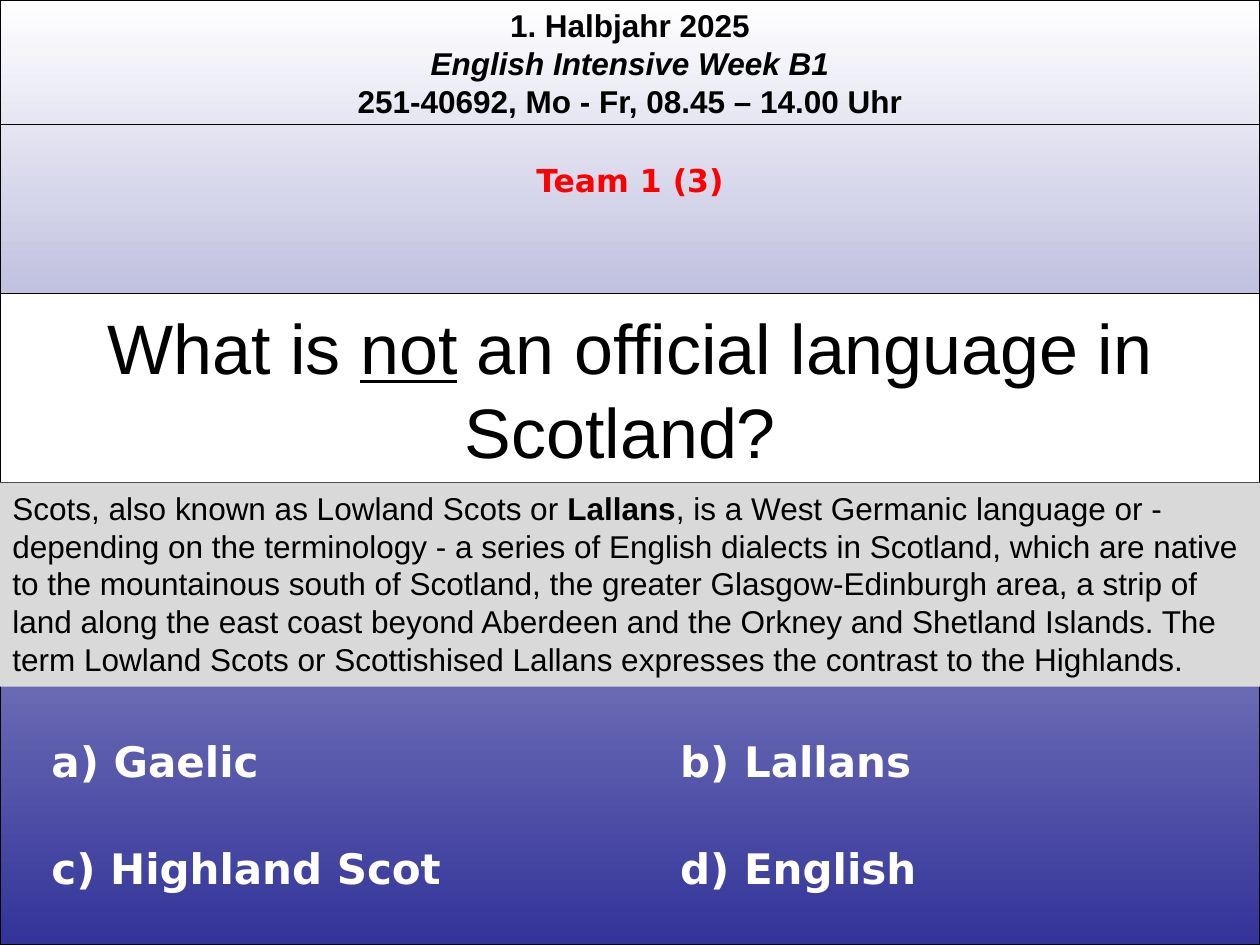
from pptx import Presentation, util as u
from pptx.dml import color
from pptx.enum import shapes, text
from pptx.oxml import ns, xmlchemy

COURSE = [
    [("1. Halbjahr 2025", "b")],
    [("English Intensive Week B1", "bi")],
    [("251-40692, Mo - Fr, 08.45 – 14.00 Uhr", "b")],
]
TEAM = [[("Team 1 (3)", "b")]]
QUESTION = [[("What is ", ""), ("not", "u"), (" an official language in Scotland? ", "")]]
EXPLANATION = [[
    ("Scots, also known as Lowland Scots or ", ""),
    ("Lallans", "b"),
    (", is a West Germanic language or - depending on the terminology - a series of "
     "English dialects in Scotland, which are native to the mountainous south of Scotland, "
     "the greater Glasgow-Edinburgh area, a strip of land along the east coast beyond "
     "Aberdeen and the Orkney and Shetland Islands. The term Lowland Scots or Scottishised "
     "Lallans expresses the contrast to the Highlands.", ""),
]]
ANSWERS = [["a) Gaelic", "b) Lallans"], ["c) Highland Scot", "d) English"]]
ANSWER_LEFTS = [0.31, 5.3]
ANSWER_TOPS = [5.79, 6.64]

THEME = {
    "black": "000000", "white": "FFFFFF", "red": "FF0000", "grey": "D9D9D9", "blue": "333399",
    "sans": "Arial", "display": "DejaVu Sans",
    "small": 18, "answer": 24, "question": 40, "line": 0.75,
}
WIDTH, HEIGHT = 10, 7.5


def rgb(name):
    return color.RGBColor.from_string(THEME[name])


def outline(line):
    line.color.rgb = rgb("black")
    line.width = u.Pt(THEME["line"])


def write(shape, paragraphs, size, ink="black", font="sans", centred=False, middle=False):
    frame = shape.text_frame
    frame.word_wrap = True
    frame.auto_size = text.MSO_AUTO_SIZE.NONE
    frame.vertical_anchor = text.MSO_ANCHOR.MIDDLE if middle else text.MSO_ANCHOR.TOP
    for index, runs in enumerate(paragraphs):
        paragraph = frame.add_paragraph() if index else frame.paragraphs[0]
        paragraph.alignment = text.PP_ALIGN.CENTER if centred else text.PP_ALIGN.LEFT
        for words, style in runs:
            run = paragraph.add_run()
            run.text = words
            run.font.name = THEME[font]
            run.font.size = u.Pt(THEME[size])
            run.font.color.rgb = rgb(ink)
            run.font.bold = "b" in style
            run.font.italic = "i" in style
            run.font.underline = "u" in style


def add_band(slide, top, height):
    band = slide.shapes.add_shape(
        shapes.MSO_SHAPE.RECTANGLE, 0, u.Inches(top), u.Inches(WIDTH), u.Inches(height))
    band.shadow.inherit = False
    return band


def add_text(slide, left, top, width, height, paragraphs, size, **style):
    box = slide.shapes.add_textbox(*map(u.Inches, (left, top, width, height)))
    write(box, paragraphs, size, **style)


def add_backdrop(slide):
    backdrop = add_band(slide, 0, HEIGHT)
    backdrop.fill.gradient()
    backdrop.fill.gradient_angle = 270
    for stop, position, name in zip(backdrop.fill.gradient_stops, (0, 1), ("white", "blue")):
        stop.position = position
        stop.color.rgb = rgb(name)
    outline(backdrop.line)


def add_header(slide):
    add_text(slide, 0, 0, WIDTH, 1.01, COURSE, "small", centred=True)
    rule = slide.shapes.add_connector(
        shapes.MSO_CONNECTOR.STRAIGHT, 0, u.Inches(0.99), u.Inches(WIDTH), u.Inches(0.99))
    outline(rule.line)
    rule.element.spPr.append(xmlchemy.OxmlElement("a:effectLst"))


def place_question(slide):
    title = slide.shapes.title
    slide.shapes.element.append(title.element)
    title.left, title.top = 0, u.Inches(2.33)
    title.width, title.height = u.Inches(WIDTH), u.Inches(1.5)
    title.fill.solid()
    title.fill.fore_color.rgb = rgb("white")
    outline(title.line)
    write(title, QUESTION, "question", centred=True, middle=True)


def add_explanation(slide):
    panel = add_band(slide, 3.83, 1.62)
    panel.fill.solid()
    panel.fill.fore_color.rgb = rgb("grey")
    panel.line.fill.background()
    write(panel, EXPLANATION, "small")


def main():
    presentation = Presentation()
    presentation.slide_width = u.Inches(WIDTH)
    presentation.slide_height = u.Inches(HEIGHT)
    slide = presentation.slides.add_slide(presentation.slide_layouts[5])
    add_backdrop(slide)
    add_header(slide)
    place_question(slide)
    for top, row in zip(ANSWER_TOPS, ANSWERS):
        for left, answer in zip(ANSWER_LEFTS, row):
            add_text(slide, left, top, 4.45, 0.5, [[(answer, "b")]], "answer",
                     ink="white", font="display")
    add_text(slide, 0, 1.23, WIDTH, 0.4, TEAM, "small", ink="red", font="display", centred=True)
    add_explanation(slide)
    presentation.save("out.pptx")


if __name__ == "__main__":
    main()
